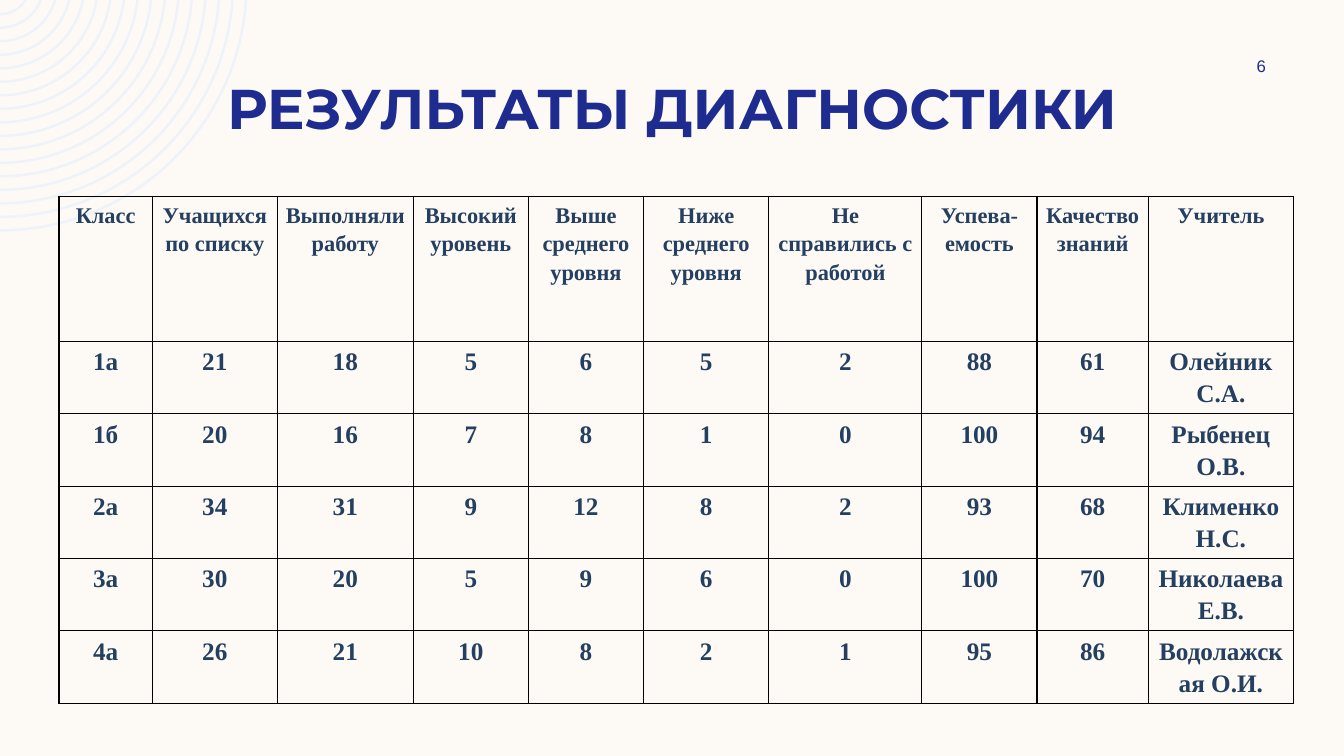
from math import asin, cos, degrees, sqrt

from lxml.etree import Element
from pptx import Presentation
from pptx.dml.color import RGBColor
from pptx.enum.text import MSO_ANCHOR as ANCHOR, PP_ALIGN as ALIGN
from pptx.oxml.ns import qn
from pptx.util import Pt

COLORS = {
    "background": "FDFAF6",
    "rings": "EEF3FA",
    "title": "1F2C8F",
    "table": "243F60",
    "border": "000000",
}

HEADERS = ["Класс", "Учащихся по списку", "Выполняли работу", "Высокий уровень",
           "Выше среднего уровня", "Ниже среднего уровня",
           "Не справились с работой", "Успева-емость", "Качество знаний", "Учитель"]
RESULTS = [
    ["1а", 21, 18, 5, 6, 5, 2, 88, 61, "Олейник С.А."],
    ["1б", 20, 16, 7, 8, 1, 0, 100, 94, "Рыбенец О.В."],
    ["2а", 34, 31, 9, 12, 8, 2, 93, 68, "Клименко Н.С."],
    ["3а", 30, 20, 5, 9, 6, 0, 100, 70, "Николаева Е.В."],
    ["4а", 26, 21, 10, 8, 2, 1, 95, 86, "Водолажская О.И."],
]
COL_WIDTHS = [66.5, 89.5, 97, 82.3, 82.3, 89.5, 109.3, 82.3, 79.5, 103.6]
HEADER_HEIGHT, ROW_HEIGHT = 103.5, 45.4


def color(name):
    return RGBColor.from_string(COLORS[name])


def write(tf, text, font, size, color_name, bold=False):
    """Put one centred line of formatted text in a frame."""
    p = tf.paragraphs[0]
    p.text = text
    p.alignment = ALIGN.CENTER
    f = p.runs[0].font
    f.name, f.size, f.bold = font, Pt(size), bold
    f.color.rgb = color(color_name)
    return p


def add_label(slide, box, text, font, size, bold=False):
    sp = slide.shapes.add_textbox(*map(Pt, box))
    tf = sp.text_frame
    tf.word_wrap = True
    tf.vertical_anchor = ANCHOR.MIDDLE
    write(tf, text, font, size, "title", bold)


def arc_to(radius, start, end):
    """A circular path segment between two angles in degrees."""
    r = str(Pt(radius))
    return Element(qn("a:arcTo"), wR=r, hR=r, stAng=str(round(start * 60000)),
                   swAng=str(round((end - start) * 60000)))


def add_rings(slide, count=17, outer=177, step=9.65, band=1.8, rise=11.5):
    """Quarter rings whose common centre lies above the slide corner."""
    builder, arcs = None, []
    for i in range(count):
        big = outer - i * step
        small = big - band
        corners = [(Pt(sqrt(big ** 2 - rise ** 2)), 0), (0, Pt(big - rise)),
                   (0, Pt(small - rise)), (Pt(sqrt(small ** 2 - rise ** 2)), 0)]
        if builder is None:
            builder = slide.shapes.build_freeform(*corners[0])
        else:
            builder.move_to(*corners[0])
        builder.add_line_segments(corners[1:], close=True)
        arcs += [arc_to(big, degrees(asin(rise / big)), 90), None,
                 arc_to(small, 90, degrees(asin(rise / small)))]
    sp = builder.convert_to_shape()

    # Round the long sides of each ring
    sides = list(sp._element.iter(qn("a:lnTo")))
    for side, arc in zip(sides, arcs):
        if arc is not None:
            side.getparent().replace(side, arc)

    sp.shadow.inherit = False
    sp.fill.solid()
    sp.fill.fore_color.rgb = color("rings")
    sp.line.fill.background()


def set_borders(cell, width=1):
    tc_pr = cell._tc.get_or_add_tcPr()
    for side in ("lnL", "lnR", "lnT", "lnB"):
        ln = Element(qn(f"a:{side}"), w=str(Pt(width)))
        fill = Element(qn("a:solidFill"))
        fill.append(Element(qn("a:srgbClr"), val=COLORS["border"]))
        ln.append(fill)
        tc_pr.append(ln)


def fill_cell(cell, text, size):
    cell.margin_left = cell.margin_right = Pt(5)
    cell.margin_top, cell.margin_bottom = Pt(2), 0
    p = write(cell.text_frame, text, "Times New Roman", size, "table", bold=True)
    p.line_spacing = 1.15
    set_borders(cell)
    cell.fill.background()


def add_results(slide, left, top):
    rows = [HEADERS] + RESULTS
    heights = [HEADER_HEIGHT] + [ROW_HEIGHT] * len(RESULTS)
    frame = slide.shapes.add_table(len(rows), len(HEADERS), Pt(left), Pt(top),
                                   Pt(sum(COL_WIDTHS)), Pt(sum(heights)))
    table = frame.table
    table.horz_banding = False
    for column, width in zip(table.columns, COL_WIDTHS):
        column.width = Pt(width)
    for r, (values, height) in enumerate(zip(rows, heights)):
        table.rows[r].height = Pt(height)
        for c, value in enumerate(values):
            fill_cell(table.cell(r, c), str(value), 16 if r == 0 else 18)


def main():
    prs = Presentation()
    prs.slide_width, prs.slide_height = Pt(960), Pt(540)
    slide = prs.slides.add_slide(prs.slide_layouts[6])
    slide.background.fill.solid()
    slide.background.fill.fore_color.rgb = color("background")

    # Corner decoration
    add_rings(slide)

    # Title and page number
    add_label(slide, (60, 46.5, 840, 60.5), "РЕЗУЛЬТАТЫ ДИАГНОСТИКИ",
              "Montserrat", 40, bold=True)
    add_label(slide, (862, 36, 78, 21.6), "6", "Arial", 12)

    # Results by class
    add_results(slide, 42.2, 140.4)

    prs.save("out.pptx")


if __name__ == "__main__":
    main()
